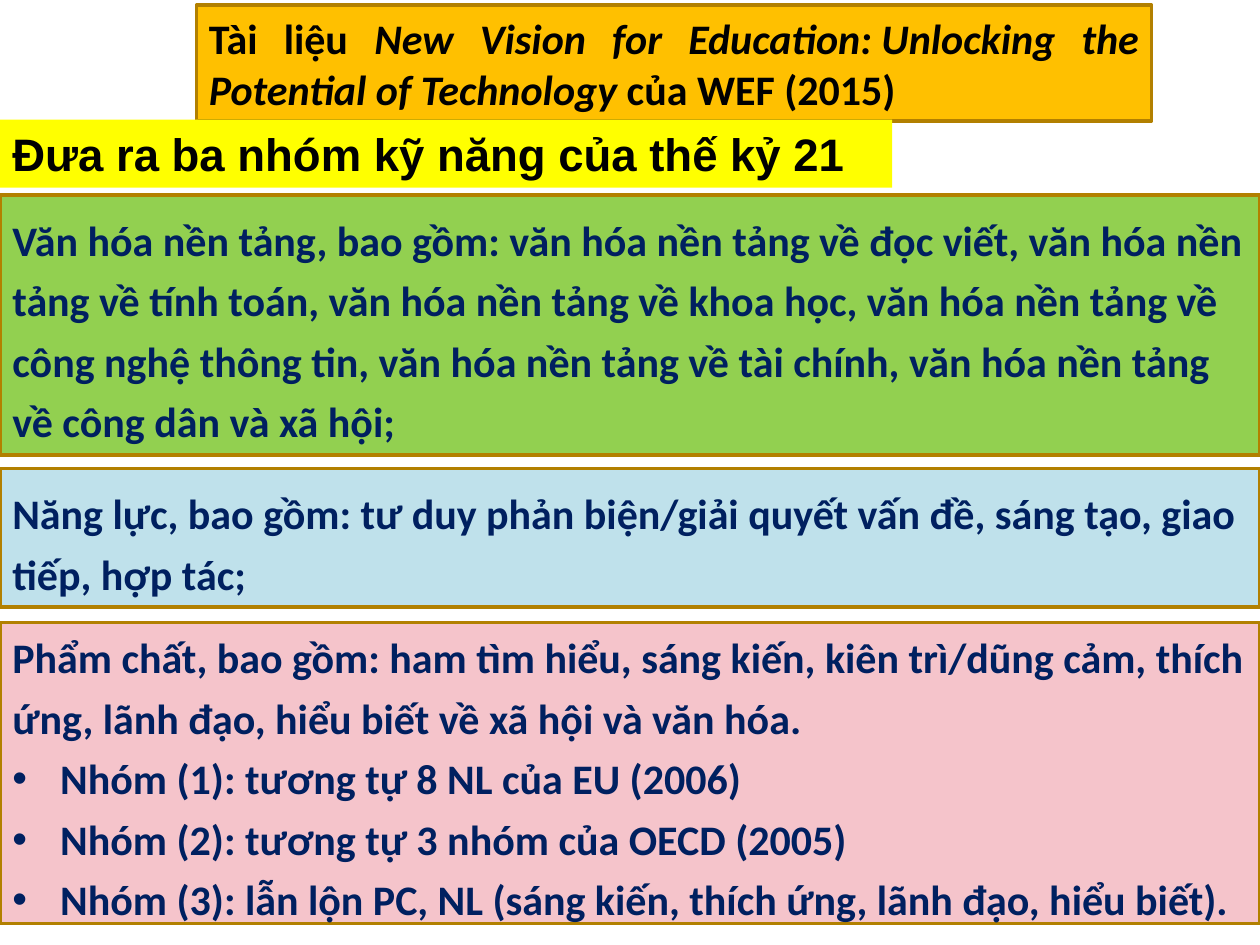
from lxml.etree import SubElement
from pptx import Presentation
from pptx.dml.color import RGBColor
from pptx.enum.shapes import MSO_SHAPE
from pptx.enum.text import MSO_ANCHOR, PP_ALIGN
from pptx.oxml.ns import qn
from pptx.util import Inches, Pt

BLACK = RGBColor(0x00, 0x00, 0x00)
NAVY = RGBColor(0x00, 0x20, 0x60)
BRONZE = RGBColor(0xB2, 0x80, 0x00)
AMBER = RGBColor(0xFF, 0xC0, 0x00)
YELLOW = RGBColor(0xFF, 0xFF, 0x00)
GREEN = RGBColor(0x92, 0xD0, 0x50)
BLUE = RGBColor(0xBF, 0xE1, 0xEB)
PINK = RGBColor(0xF5, 0xC4, 0xCB)

LITERACIES = (
    "Văn hóa nền tảng, bao gồm: văn hóa nền tảng về đọc viết, "
    "văn hóa nền tảng về tính toán, văn hóa nền tảng về khoa học, "
    "văn hóa nền tảng về công nghệ thông tin, văn hóa nền tảng về tài chính, "
    "văn hóa nền tảng về công dân và xã hội;"
)
COMPETENCIES = (
    "Năng lực, bao gồm: tư duy phản biện/giải quyết vấn đề, sáng tạo, "
    "giao tiếp, hợp tác;"
)
QUALITIES = (
    "Phẩm chất, bao gồm: ham tìm hiểu, sáng kiến, kiên trì/dũng cảm, "
    "thích ứng, lãnh đạo, hiểu biết về xã hội và văn hóa."
)
COMPARISONS = [
    "Nhóm (1): tương tự 8 NL của EU (2006)",
    "Nhóm (2): tương tự 3 nhóm của OECD (2005)",
    "Nhóm (3): lẫn lộn PC, NL (sáng kiến, thích ứng, lãnh đạo, hiểu biết).",
]


def add_panel(page, box, fill, outlined=True):
    """Add a filled rectangle and return its text frame."""
    panel = page.shapes.add_shape(MSO_SHAPE.RECTANGLE, *map(Inches, box))
    panel.shadow.inherit = False
    panel.fill.solid()
    panel.fill.fore_color.rgb = fill
    if outlined:
        panel.line.color.rgb = BRONZE
        panel.line.width = Pt(2)
    else:
        panel.line.fill.background()
    frame = panel.text_frame
    frame.word_wrap = True
    frame.vertical_anchor = MSO_ANCHOR.MIDDLE
    return frame


def add_span(para, text, color, size=24, name="Calibri", italic=False):
    """Add one bold run to a paragraph."""
    span = para.add_run()
    span.text = text
    span.font.name = name
    span.font.size = Pt(size)
    span.font.bold = True
    span.font.italic = italic
    span.font.color.rgb = color


def add_bullet(para):
    """Give a paragraph a hanging round bullet."""
    properties = para._p.get_or_add_pPr()
    properties.set("marL", str(Inches(0.38)))
    properties.set("indent", str(-Inches(0.38)))
    SubElement(properties, qn("a:buFont")).set("typeface", "Arial")
    SubElement(properties, qn("a:buChar")).set("char", "•")


def add_source_title(page, box):
    """Add the title that names the source document."""
    para = add_panel(page, box, AMBER).paragraphs[0]
    para.alignment = PP_ALIGN.JUSTIFY
    add_span(para, "Tài liệu ", BLACK)
    title = "New Vision for Education:\u00a0Unlocking the Potential of Technology "
    add_span(para, title, BLACK, italic=True)
    add_span(para, "của WEF (2015)", BLACK)


def add_heading(page, box):
    """Add the yellow heading strip."""
    frame = add_panel(page, box, YELLOW, outlined=False)
    frame.vertical_anchor = MSO_ANCHOR.TOP
    para = frame.paragraphs[0]
    para.alignment = PP_ALIGN.LEFT
    add_span(para, "Đưa ra ba nhóm kỹ năng của thế kỷ 21", BLACK, 26, "Arial")


def add_skill_group(page, box, fill, text, bullets=()):
    """Add a panel for one skill group, with optional bullets."""
    frame = add_panel(page, box, fill)
    for index, line in enumerate([text, *bullets]):
        para = frame.add_paragraph() if index else frame.paragraphs[0]
        para.alignment = PP_ALIGN.LEFT
        para.line_spacing = 1.2
        if index:
            add_bullet(para)
        add_span(para, line, NAVY)


def main():
    """Build and save the slide."""
    deck = Presentation()
    deck.slide_width = Inches(10)
    deck.slide_height = Inches(7.5)
    page = deck.slides.add_slide(deck.slide_layouts[6])
    add_skill_group(page, (0, 1.55, 10, 2.06), GREEN, LITERACIES)
    add_source_title(page, (1.56, 0.04, 7.58, 0.92))
    add_skill_group(page, (0, 3.72, 10, 1.1), BLUE, COMPETENCIES)
    add_skill_group(page, (0, 4.94, 10, 2.39), PINK, QUALITIES, COMPARISONS)
    add_heading(page, (0, 0.95, 7.08, 0.54))
    deck.save("out.pptx")


if __name__ == "__main__":
    main()
